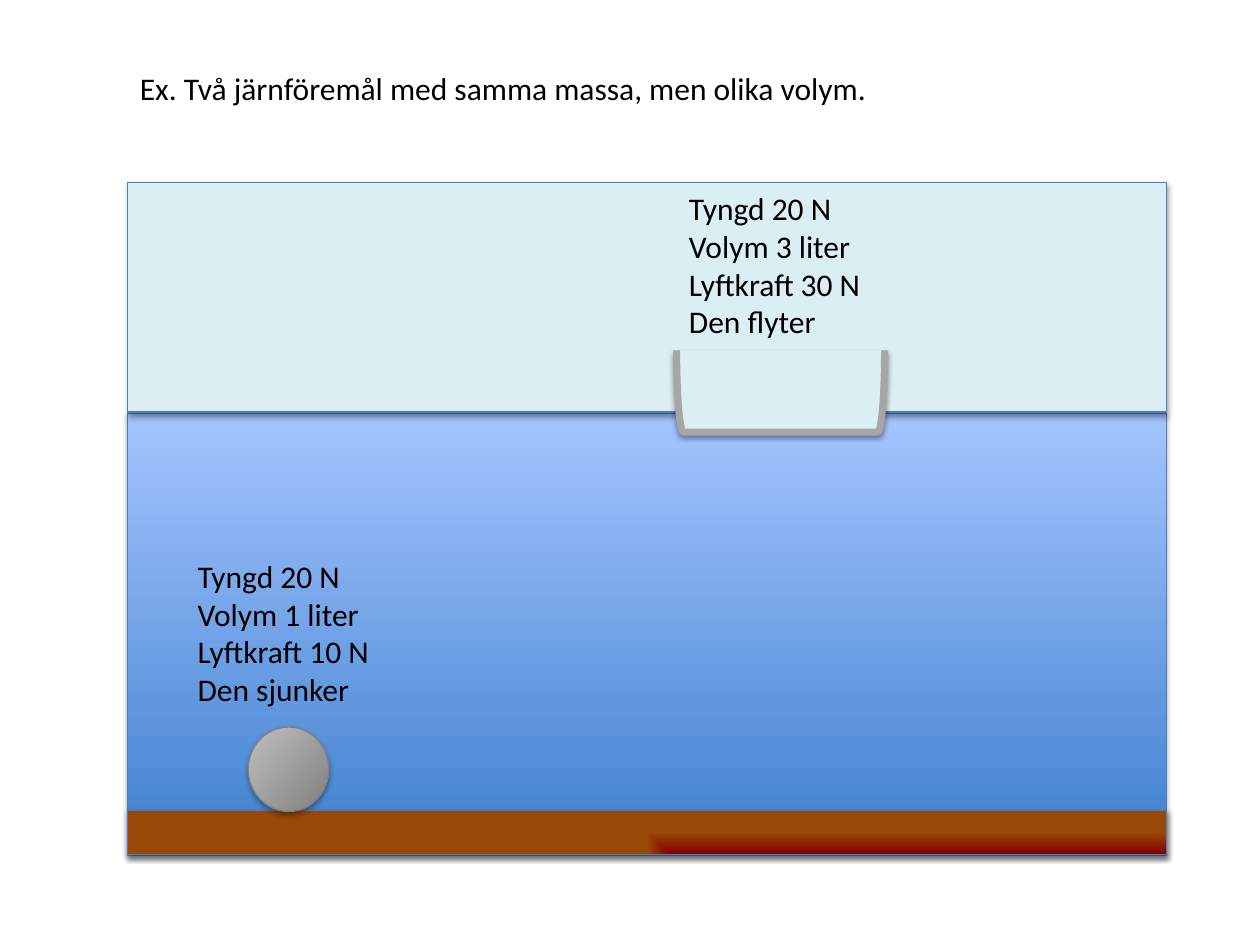
from lxml.etree import SubElement as Sub
from pptx import Presentation
from pptx.dml.color import RGBColor
from pptx.enum.shapes import MSO_SHAPE as Kind
from pptx.enum.text import MSO_ANCHOR as Anchor, MSO_AUTO_SIZE as Auto, PP_ALIGN as Align
from pptx.oxml.ns import qn
from pptx.util import Inches, Pt

BLACK = RGBColor(0x00, 0x00, 0x00)
EDGE = RGBColor(0x4B, 0x7E, 0xBC)
AIR = RGBColor(0xDB, 0xEE, 0xF4)
DEEP = RGBColor(0x3F, 0x80, 0xCE)
LIGHT = RGBColor(0xA4, 0xC4, 0xFF)
RED = RGBColor(0x80, 0x00, 0x00)
BROWN = RGBColor(0x98, 0x48, 0x07)
SILVER = RGBColor(0xBF, 0xBF, 0xBF)
IRON = RGBColor(0x80, 0x80, 0x80)
HULL = RGBColor(0xA6, 0xA6, 0xA6)

LEFT, WIDE = 1.01, 8.25
FONT = {"name": "Calibri", "size": Pt(18), "bold": False}
FRAME = {"word_wrap": True, "auto_size": Auto.SHAPE_TO_FIT_TEXT, "vertical_anchor": Anchor.TOP}


def apply(item, values):
    """Set each attribute of item from a dict."""
    for name, value in values.items():
        setattr(item, name, value)


def shade(shape, alpha=35, drop=1.8):
    """Give the shape a soft shadow straight below it."""
    shape.shadow.inherit = False
    box = shape._element.spPr.find(qn("a:effectLst"))
    cast = Sub(box, qn("a:outerShdw"), blurRad=str(Pt(3.1)), dist=str(Pt(drop)),
               dir="5400000", rotWithShape="0")
    tint = Sub(cast, qn("a:srgbClr"), val=str(BLACK))
    Sub(tint, qn("a:alpha"), val=str(alpha * 1000))


def add_form(slide, kind, area, edge, width=0.75, **cast):
    """Add an outlined preset shape with a shadow."""
    shape = slide.shapes.add_shape(kind, *map(Inches, area))
    shape.line.color.rgb = edge
    shape.line.width = Pt(width)
    shade(shape, **cast)
    return shape


def paint(shape, color):
    """Fill the shape with one colour."""
    shape.fill.solid()
    shape.fill.fore_color.rgb = color


def blend(shape, first, last, angle=0):
    """Fill the shape with a linear blend of two colours."""
    fill = shape.fill
    fill.gradient()
    fill.gradient_angle = angle
    for stop, color in zip(fill.gradient_stops, (first, last)):
        stop.color.rgb = color


def corner(shape):
    """Turn a linear blend into one from the lower right corner."""
    grad = shape._element.spPr.find(qn("a:gradFill"))
    grad.remove(grad.find(qn("a:lin")))
    route = Sub(grad, qn("a:path"), path="rect")
    Sub(route, qn("a:fillToRect"), l="100000", t="100000")


def write(shape, lines):
    """Write left-aligned lines into the shape."""
    frame = shape.text_frame
    apply(frame, FRAME)
    frame.text = "\n".join(lines)
    for para in frame.paragraphs:
        para.alignment = Align.LEFT
        apply(para.font, FONT)
        para.font.color.rgb = BLACK


def add_title(slide, text):
    """Move and fill the title placeholder."""
    title = slide.shapes.title
    apply(title, {"left": Inches(LEFT), "top": Inches(0.5),
                  "width": Inches(WIDE), "height": Inches(0.4)})
    write(title, [text])


def add_facts(slide, left, top, volume, lift, result):
    """List the forces on one iron object."""
    box = slide.shapes.add_textbox(*map(Inches, (left, top, 1.9, 1.31)))
    write(box, ["Tyngd 20 N", f"Volym {volume} liter", f"Lyftkraft {lift} N", f"Den {result}"])


def add_scene(slide):
    """Draw water, air, bottom, ball and boat."""
    water = add_form(slide, Kind.RECTANGLE, (LEFT, 3.28, WIDE, 3.51), EDGE)
    blend(water, DEEP, LIGHT, 90)
    air = add_form(slide, Kind.RECTANGLE, (LEFT, 1.45, WIDE, 1.82), EDGE)
    paint(air, AIR)
    ground = add_form(slide, Kind.RECTANGLE, (LEFT, 6.43, WIDE, 0.35), EDGE)
    blend(ground, RED, BROWN)
    corner(ground)
    ball = add_form(slide, Kind.OVAL, (1.97, 5.77, 0.64, 0.67), IRON)
    blend(ball, SILVER, IRON, 319)
    boat = add_form(slide, Kind.RIGHT_BRACKET, (5.87, 2.28, 0.65, 1.65), HULL, 4,
                    alpha=38, drop=1.6)
    boat.rotation = 90
    paint(boat, AIR)


def main():
    """Build and save the slide."""
    deck = Presentation()
    apply(deck, {"slide_width": Inches(10), "slide_height": Inches(7.5)})
    slide = deck.slides.add_slide(deck.slide_layouts[5])
    add_scene(slide)
    add_facts(slide, 1.47, 4.37, 1, 10, "sjunker")
    add_facts(slide, 5.37, 1.45, 3, 30, "flyter")
    add_title(slide, "Ex. Två järnföremål med samma massa, men olika volym.")
    deck.save("out.pptx")


if __name__ == "__main__":
    main()
